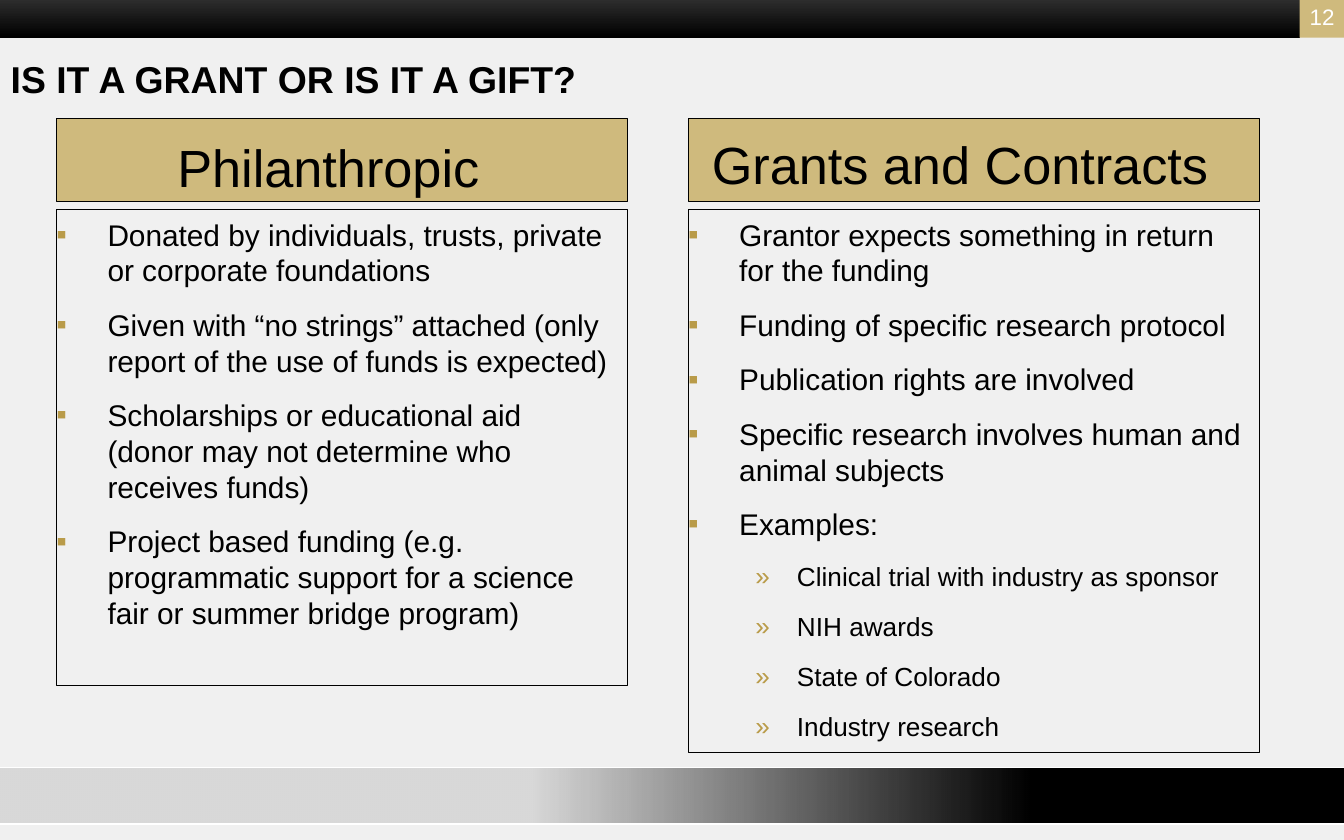
from lxml.etree import SubElement
from pptx import Presentation
from pptx.dml.color import RGBColor
from pptx.enum.shapes import MSO_SHAPE as SHAPE
from pptx.enum.text import MSO_ANCHOR as ANCHOR, PP_ALIGN as ALIGN
from pptx.oxml.ns import qn
from pptx.util import Inches, Pt

WIDTH, HEIGHT = 10, 6.25
GOLD, DARK_GOLD, BLACK, WHITE = "CFBA7D", "B99B49", "000000", "FFFFFF"
COLUMN_WIDTH, COLUMN_STEP, COLUMN_LEFT = 4.25, 4.7, 0.42
COLUMN_TOP, HEADING_HEIGHT, HEADING_GAP = 0.88, 0.62, 0.06

# Bullet, left margin, hanging indent (inches) and text size for each level
LEVELS = [("▪", 0.38, 0.38, 16), ("»", 0.81, 0.31, 14)]

COLUMNS = [
    {
        "heading": "Philanthropic ",
        "drop": 0.03,
        "body_height": 3.54,
        "points": [
            (0, "Donated by individuals, trusts, private or corporate foundations"),
            (0, "Given with “no strings” attached (only report of the use of funds is expected)"),
            (0, "Scholarships or educational aid (donor may not determine who receives funds)"),
            (0, "Project based funding (e.g. programmatic support for a science fair or summer bridge program)"),
        ],
    },
    {
        "heading": "Grants and Contracts ",
        "drop": 0.05,
        "body_height": 4.04,
        "points": [
            (0, "Grantor expects something in return for the funding"),
            (0, "Funding of specific research protocol"),
            (0, "Publication rights are involved"),
            (0, "Specific research involves human and animal subjects"),
            (0, "Examples:"),
            (1, "Clinical trial with industry as sponsor"),
            (1, "NIH awards"),
            (1, "State of Colorado"),
            (1, "Industry research"),
        ],
    },
]


def color(hex_value):
    return RGBColor.from_string(hex_value)


def add_panel(slide, box, fill=None, line=None, line_width=0.5, kind=SHAPE.RECTANGLE):
    panel = slide.shapes.add_shape(kind, *map(Inches, box))
    panel.shadow.inherit = False
    if fill:
        panel.fill.solid()
        panel.fill.fore_color.rgb = color(fill)
    else:
        panel.fill.background()
    if line:
        panel.line.color.rgb = color(line)
        panel.line.width = Pt(line_width)
    else:
        panel.line.fill.background()
    return panel


def set_gradient(panel, angle, stops):
    """Stops are (percent, colour, opacity percent)."""
    panel.fill.gradient()
    panel.fill.gradient_angle = angle
    stop_list = panel.fill._fill._gradFill.find(qn("a:gsLst"))
    for old_stop in list(stop_list):
        stop_list.remove(old_stop)
    for percent, hex_value, opacity in stops:
        stop = SubElement(stop_list, qn("a:gs"), pos=str(percent * 1000))
        tone = SubElement(stop, qn("a:srgbClr"), val=hex_value)
        if opacity < 100:
            SubElement(tone, qn("a:alpha"), val=str(opacity * 1000))


def set_frame(frame, anchor, insets, wrap=True):
    frame.word_wrap = wrap
    frame.vertical_anchor = anchor
    for side, inset in zip(("left", "top", "right", "bottom"), insets):
        setattr(frame, f"margin_{side}", Inches(inset))


def write(paragraph, text, size, hex_value=BLACK, align=ALIGN.LEFT, bold=False):
    paragraph.alignment = align
    run = paragraph.add_run()
    run.text = text
    for name, value in {"name": "Arial", "size": Pt(size), "bold": bold}.items():
        setattr(run.font, name, value)
    run.font.color.rgb = color(hex_value)


def add_bullet(paragraph, mark, margin, hanging):
    properties = paragraph._p.get_or_add_pPr()
    properties.set("marL", str(Inches(margin)))
    properties.set("indent", str(-Inches(hanging)))
    tone = SubElement(properties, qn("a:buClr"))
    SubElement(tone, qn("a:srgbClr"), val=DARK_GOLD)
    SubElement(properties, qn("a:buFont"), typeface="Arial")
    SubElement(properties, qn("a:buChar"), char=mark)


def add_header(slide, box, number):
    left, top, width, height = box
    tab = height + 0.01
    # Dark band, then the gold tab with the slide number
    band = add_panel(slide, (left, top, width - tab, height), BLACK)
    set_gradient(band, 270, [(0, "333333", 100), (100, BLACK, 100)])
    number_tab = add_panel(slide, (left + width - tab, top, tab, height), GOLD)
    set_frame(number_tab.text_frame, ANCHOR.MIDDLE, (0.1, 0.05, 0.07, 0.05), wrap=False)
    write(number_tab.text_frame.paragraphs[0], number, 12, WHITE, ALIGN.RIGHT)


def add_footer(slide, box):
    bar = add_panel(slide, box, BLACK, WHITE, 0.75, SHAPE.ROUNDED_RECTANGLE)
    bar.adjustments[0] = 0
    set_gradient(bar, 0, [(40, BLACK, 10), (76, BLACK, 100)])


def add_title(slide, box, text):
    frame = slide.shapes.add_textbox(*map(Inches, box)).text_frame
    set_frame(frame, ANCHOR.MIDDLE, (0, 0, 0, 0))
    write(frame.paragraphs[0], text, 20, bold=True)


def add_column(slide, left, top, column):
    # Heading
    heading = add_panel(slide, (left, top, COLUMN_WIDTH, HEADING_HEIGHT), GOLD, BLACK)
    set_frame(heading.text_frame, ANCHOR.BOTTOM, (0, 0.05, 0.1, column["drop"]))
    write(heading.text_frame.paragraphs[0], column["heading"], 28, align=ALIGN.CENTER)
    # Bulleted body
    body_top = top + HEADING_HEIGHT + HEADING_GAP
    body = add_panel(slide, (left, body_top, COLUMN_WIDTH, column["body_height"]), line=BLACK)
    frame = body.text_frame
    set_frame(frame, ANCHOR.TOP, (0, 0.05, 0.1, 0.05))
    for index, (level, text) in enumerate(column["points"]):
        paragraph = frame.add_paragraph() if index else frame.paragraphs[0]
        mark, margin, hanging, size = LEVELS[level]
        add_bullet(paragraph, mark, margin, hanging)
        paragraph.level = level
        if index:
            paragraph.space_before = Pt(10)
        write(paragraph, text, size)


def main():
    deck = Presentation()
    deck.slide_width, deck.slide_height = Inches(WIDTH), Inches(HEIGHT)
    slide = deck.slides.add_slide(deck.slide_layouts[6])
    slide.background.fill.solid()
    slide.background.fill.fore_color.rgb = color("F0F0F0")

    add_footer(slide, (-0.17, 5.71, WIDTH + 0.33, 0.42))
    add_header(slide, (0, -0.04, WIDTH, 0.32), "12")
    add_title(slide, (0.08, 0.46, 8.75, 0.25), "IS IT A GRANT OR IS IT A GIFT?")
    for index, column in enumerate(COLUMNS):
        add_column(slide, COLUMN_LEFT + index * COLUMN_STEP, COLUMN_TOP, column)
    deck.save("out.pptx")


if __name__ == "__main__":
    main()
